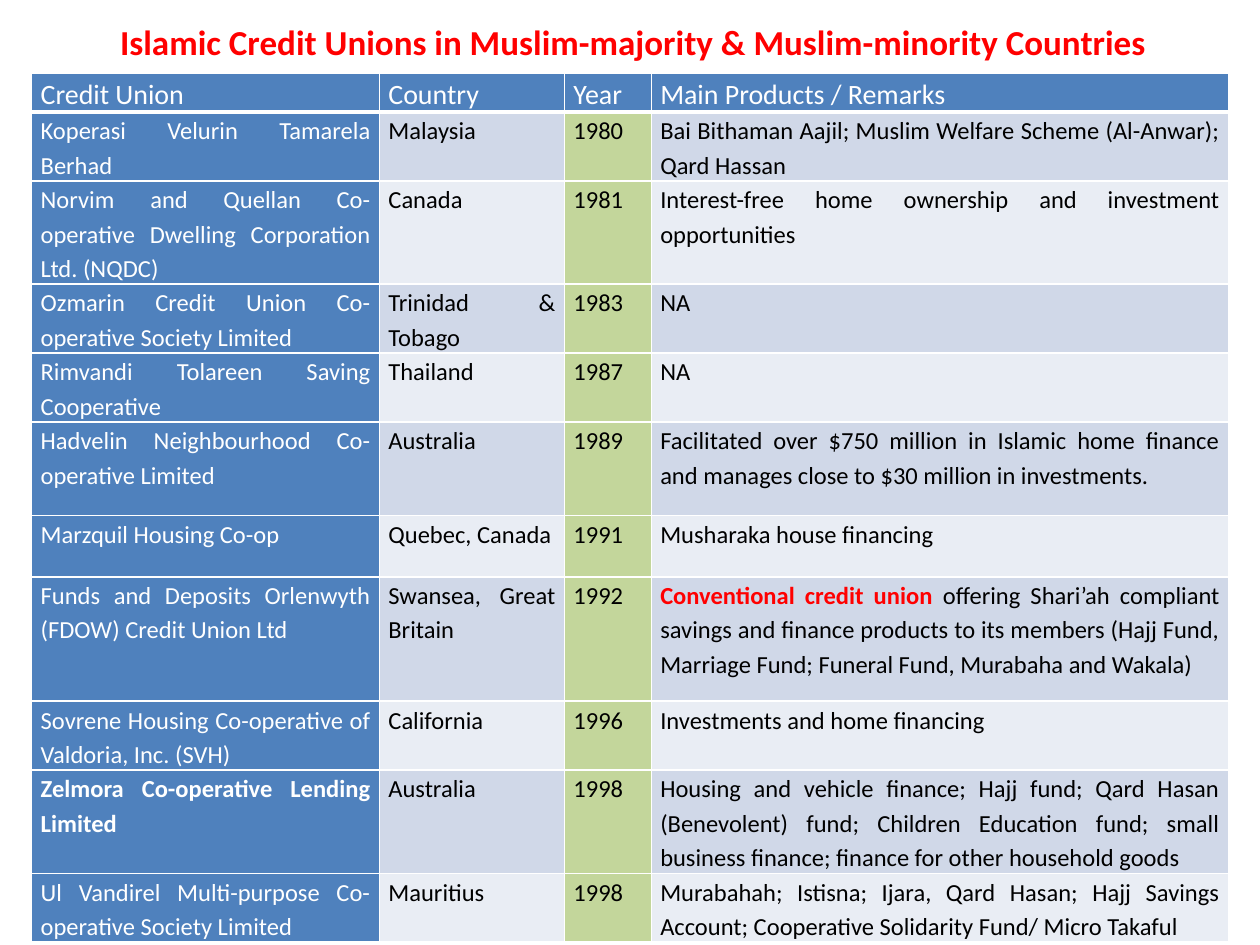
import pptx
import pptx.dml.color
import pptx.enum.text
import pptx.oxml
import pptx.oxml.ns
import pptx.util
from pptx.util import Cm

COLOURS = {
    "white": "FFFFFF",
    "black": "000000",
    "red": "FF0000",
    "blue": "4F81BD",
    "green": "C3D69B",
    "dark_band": "D0D8E8",
    "light_band": "E9EDF4",
}
FONT = "Calibri"
TITLE = "Islamic Credit Unions in Muslim-majority & Muslim-minority Countries"
HIGHLIGHT = "Conventional credit union "
BOLD_UNION = "Zelmora Co-operative Lending Limited"
COLUMN_WIDTHS = [7.01, 3.73, 1.75, 11.64]
ROWS = [
    (0.79, "Credit Union", "Country", "Year", "Main Products / Remarks"),
    (1.39, "Koperasi Velurin Tamarela Berhad", "Malaysia", "1980",
     "Bai Bithaman Aajil; Muslim Welfare Scheme (Al-Anwar); Qard Hassan"),
    (2.08, "Norvim and Quellan Co-operative Dwelling Corporation Ltd. (NQDC)",
     "Canada", "1981",
     "Interest-free home ownership and investment opportunities"),
    (1.39, "Ozmarin Credit Union Co-operative Society Limited",
     "Trinidad & Tobago", "1983", "NA"),
    (1.39, "Rimvandi Tolareen Saving Cooperative", "Thailand", "1987", "NA"),
    (1.88, "Hadvelin Neighbourhood Co-operative Limited", "Australia", "1989",
     "Facilitated over $750 million in Islamic home finance and manages "
     "close to $30 million in investments."),
    (1.24, "Marzquil Housing Co-op", "Quebec, Canada", "1991",
     "Musharaka house financing"),
    (2.51, "Funds and Deposits Orlenwyth (FDOW) Credit Union Ltd",
     "Swansea, Great Britain", "1992",
     HIGHLIGHT + "offering Shari’ah compliant savings and finance products "
     "to its members (Hajj Fund, Marriage Fund; Funeral Fund, Murabaha and "
     "Wakala)"),
    (1.39, "Sovrene Housing Co-operative of Valdoria, Inc. (SVH)",
     "California", "1996", "Investments and home financing"),
    (2.08, BOLD_UNION, "Australia", "1998",
     "Housing and vehicle finance; Hajj fund; Qard Hasan (Benevolent) fund; "
     "Children Education fund; small business finance; finance for other "
     "household goods"),
    (1.39, "Ul Vandirel Multi-purpose Co-operative Society Limited",
     "Mauritius", "1998",
     "Murabahah; Istisna; Ijara, Qard Hasan; Hajj Savings Account; "
     "Cooperative Solidarity Fund/ Micro Takaful"),
]


def colour(name):
    return pptx.dml.color.RGBColor.from_string(COLOURS[name])


def set_font(font, size, colour_name, bold=False):
    font.name = FONT
    font.size = pptx.util.Pt(size)
    font.bold = bold
    font.color.rgb = colour(colour_name)


def set_borders(cell, bottom_width):
    properties = cell._tc.get_or_add_tcPr()
    for side, width in (("L", 1), ("R", 1), ("T", 1), ("B", bottom_width)):
        properties.append(pptx.oxml.parse_xml(
            f'<a:ln{side} {pptx.oxml.ns.nsdecls("a")} w="{pptx.util.Pt(width)}">'
            f'<a:solidFill><a:srgbClr val="{COLOURS["white"]}"/></a:solidFill>'
            f'</a:ln{side}>'))


def cell_fill(row_index, column_index):
    if row_index == 0 or column_index == 0:
        return "blue"
    if column_index == 2:
        return "green"
    return "dark_band" if row_index % 2 else "light_band"


def fill_cell(cell, text, row_index, column_index):
    fill = cell_fill(row_index, column_index)
    set_borders(cell, 1 if row_index else 3)
    cell.fill.solid()
    cell.fill.fore_color.rgb = colour(fill)
    cell.margin_left = cell.margin_right = Cm(0.18)
    cell.margin_top = cell.margin_bottom = 0

    paragraph = cell.text_frame.paragraphs[0]
    paragraph.alignment = pptx.enum.text.PP_ALIGN.JUSTIFY
    paragraph.line_spacing = 1.15
    size = 14 if row_index else 16
    text_colour = "white" if fill == "blue" else "black"
    if text.startswith(HIGHLIGHT):
        parts = [(HIGHLIGHT, "red", True),
                 (text.removeprefix(HIGHLIGHT), text_colour, False)]
        for part, part_colour, bold in parts:
            run = paragraph.add_run()
            run.text = part
            set_font(run.font, size, part_colour, bold)
    else:
        paragraph.text = text
        set_font(paragraph.font, size, text_colour, text == BOLD_UNION)


def add_title(slide, left, top, width, height):
    shape = slide.shapes.add_textbox(left, top, width, height)
    frame = shape.text_frame
    frame.word_wrap = True
    frame.vertical_anchor = pptx.enum.text.MSO_ANCHOR.MIDDLE
    paragraph = frame.paragraphs[0]
    paragraph.text = TITLE
    paragraph.alignment = pptx.enum.text.PP_ALIGN.CENTER
    set_font(paragraph.font, 20, "red", True)


def add_union_table(slide, left, top, width, height):
    table = slide.shapes.add_table(
        len(ROWS), len(COLUMN_WIDTHS), left, top, width, height).table
    for column, share in zip(table.columns, COLUMN_WIDTHS):
        column.width = round(width * share / sum(COLUMN_WIDTHS))
    for row_index, (row_height, *texts) in enumerate(ROWS):
        table.rows[row_index].height = Cm(row_height)
        for column_index, text in enumerate(texts):
            fill_cell(table.cell(row_index, column_index), text,
                      row_index, column_index)


def main():
    presentation = pptx.Presentation()
    presentation.slide_width = Cm(25.4)
    presentation.slide_height = Cm(19.05)
    slide = presentation.slides.add_slide(presentation.slide_layouts[6])
    add_title(slide, Cm(0.7), Cm(0.2), Cm(24.13), Cm(1.27))
    add_union_table(slide, Cm(0.64), Cm(1.47), Cm(24.13), Cm(17.5))
    presentation.save("out.pptx")


if __name__ == "__main__":
    main()
